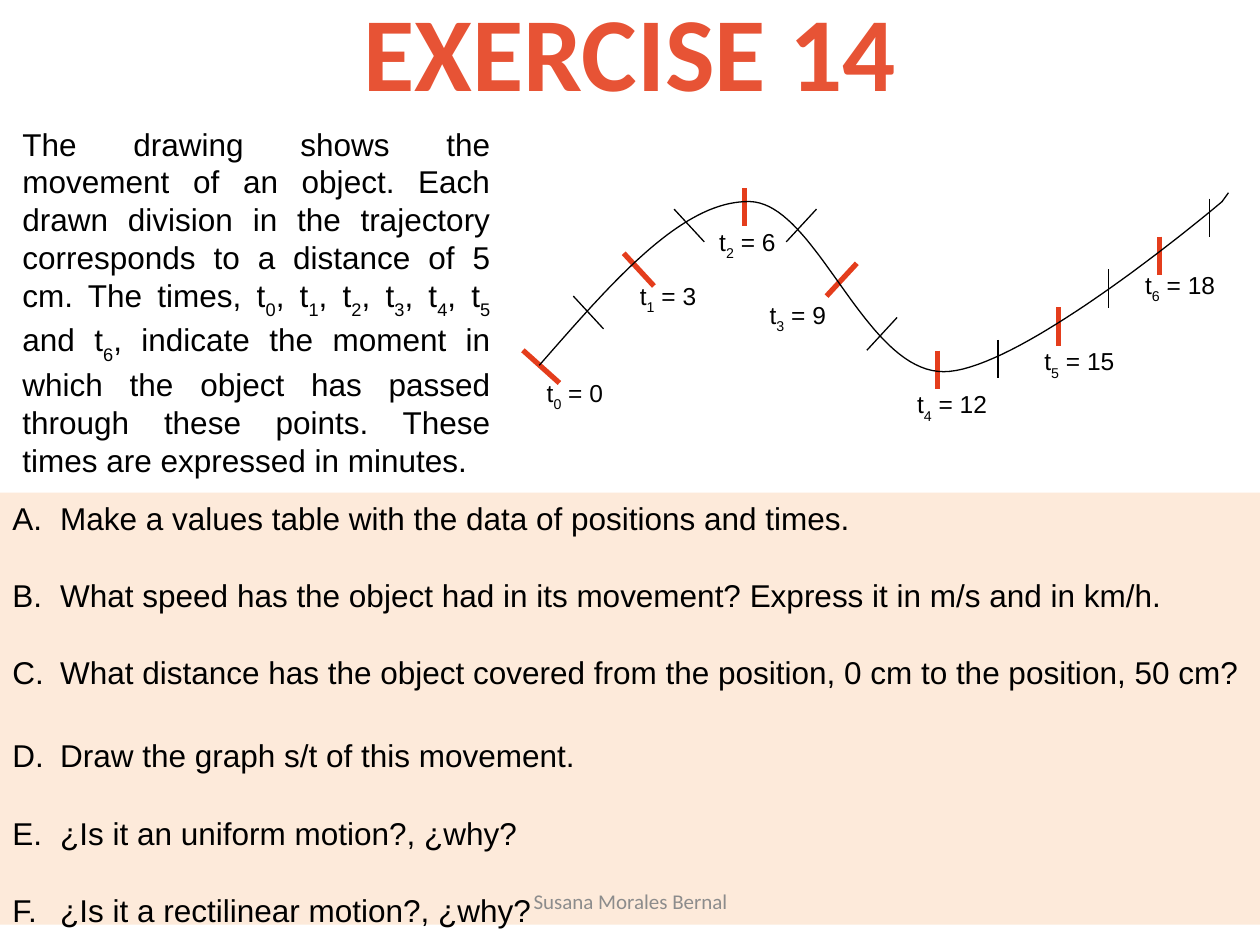
from dataclasses import dataclass

from lxml.etree import SubElement
from pptx import Presentation
from pptx.dml.color import RGBColor
from pptx.enum.shapes import MSO_CONNECTOR as Connector, MSO_SHAPE as Shape
from pptx.enum.text import MSO_ANCHOR as Anchor, PP_ALIGN as Align
from pptx.oxml.ns import qn
from pptx.util import Inches, Pt


@dataclass(frozen=True)
class Theme:
    ink: str = "000000"
    heading: str = "E75335"
    mark: str = "E43D1C"
    panel: str = "FDEADA"
    muted: str = "8C8C8C"
    body_font: str = "Arial"
    title_font: str = "Calibri"
    title_size: int = 60
    body_size: int = 18
    label_size: int = 14
    footer_size: int = 12
    thick: float = 3
    thin: float = 0.75


class ExerciseSlide:
    """Places elements on a grid of 100 columns by 75 rows."""

    def __init__(self, deck, theme):
        self.theme = theme
        self.column = deck.slide_width / 100
        self.row = deck.slide_height / 75
        self.slide = deck.slides.add_slide(deck.slide_layouts[5])
        self.drawing = self.slide.shapes.add_group_shape().shapes

    def spot(self, x, y):
        return round(x * self.column), round(y * self.row)

    def box(self, x, y, width, height):
        return *self.spot(x, y), *self.spot(width, height)

    def style(self, run, size, color=None, font=None, bold=False):
        run.font.size = Pt(size)
        run.font.name = font or self.theme.body_font
        run.font.bold = bold
        run.font.color.rgb = RGBColor.from_string(color or self.theme.ink)

    def fill_in(self, paragraph, text, size, **look):
        """An underscore in the text lowers the one character after it."""
        first, *rest = text.split("_")
        pieces = [(first, False)]
        for part in rest:
            pieces += [(part[0], True), (part[1:], False)]
        for piece, lowered in pieces:
            run = paragraph.add_run()
            run.text = piece
            self.style(run, size, **look)
            if lowered:
                run.font._element.set("baseline", "-30000")

    def title(self, text, *place):
        heading = self.slide.shapes.title
        heading.left, heading.top, heading.width, heading.height = self.box(*place)
        frame = heading.text_frame
        frame.text = text
        frame.vertical_anchor = Anchor.MIDDLE
        frame.paragraphs[0].alignment = Align.CENTER
        self.style(frame.paragraphs[0].runs[0], self.theme.title_size,
                   self.theme.heading, self.theme.title_font, True)

    def text(self, text, place, size, align=Align.LEFT, wrap=True,
             anchor=Anchor.TOP, shapes=None, **look):
        frame = (shapes or self.slide.shapes).add_textbox(*self.box(*place)).text_frame
        frame.word_wrap = wrap
        frame.vertical_anchor = anchor
        frame.paragraphs[0].alignment = align
        self.fill_in(frame.paragraphs[0], text, size, **look)

    def division(self, x, y, dx, dy, major):
        """A short line across the trajectory, centred on (x, y)."""
        tick = self.drawing.add_connector(
            Connector.STRAIGHT,
            *self.spot(x - dx / 2, y - dy / 2), *self.spot(x + dx / 2, y + dy / 2))
        color = self.theme.mark if major else self.theme.ink
        tick.line.color.rgb = RGBColor.from_string(color)
        tick.line.width = Pt(self.theme.thick if major else self.theme.thin)
        SubElement(tick._element.spPr, qn("a:effectLst"))

    def curve(self, start, bends, end, steps=40):
        """Joined cubic arcs, followed by a straight last stretch."""
        points, here = [], start
        for bend in bends:
            knots = (here, *bend)
            for step in range(1, steps + 1):
                t = step / steps
                weights = ((1 - t) ** 3, 3 * t * (1 - t) ** 2,
                           3 * t * t * (1 - t), t ** 3)
                points.append(self.spot(*(
                    sum(w * knot[axis] for w, knot in zip(weights, knots))
                    for axis in (0, 1))))
            here = bend[-1]
        builder = self.drawing.build_freeform(*self.spot(*start))
        builder.add_line_segments(points + [self.spot(*end)], close=False)
        trajectory = builder.convert_to_shape()
        trajectory.shadow.inherit = False
        trajectory.fill.background()
        trajectory.line.color.rgb = RGBColor.from_string(self.theme.ink)
        trajectory.line.width = Pt(self.theme.thin)

    def questions(self, lines, place, gap, extra_gaps):
        panel = self.slide.shapes.add_shape(Shape.RECTANGLE, *self.box(*place))
        panel.shadow.inherit = False
        panel.fill.solid()
        panel.fill.fore_color.rgb = RGBColor.from_string(self.theme.panel)
        panel.line.fill.background()
        frame = panel.text_frame
        frame.word_wrap = True
        frame.vertical_anchor = Anchor.TOP
        for index, line in enumerate(lines):
            paragraph = frame.add_paragraph() if index else frame.paragraphs[0]
            paragraph.alignment = Align.LEFT
            if index:
                paragraph.space_before = Pt(gap + extra_gaps.get(index, 0))
            self.fill_in(paragraph, line, self.theme.body_size)
            # Hanging capital letters: A., B., C. ...
            properties = paragraph._p.get_or_add_pPr()
            properties.set("marL", str(Inches(0.38)))
            properties.set("indent", str(-Inches(0.38)))
            SubElement(properties, qn("a:buFont"), typeface=self.theme.body_font)
            SubElement(properties, qn("a:buAutoNum"), type="alphaUcPeriod")


FALLING, RISING, UPRIGHT = (2.4, 2.6), (-2.4, 2.6), (0, 3.05)
DIVISIONS = [
    (42.95, 29.1, (2.9, 2.6)), (46.7, 24.8, FALLING), (50.7, 21.4, FALLING),
    (54.7, 17.9, FALLING), (59.1, 16.45, UPRIGHT), (63.6, 17.9, RISING),
    (66.8, 22.2, RISING), (70, 26.5, RISING), (74.4, 29.35, UPRIGHT),
    (79.2, 28.5, UPRIGHT), (84, 25.9, UPRIGHT), (88, 22.9, UPRIGHT),
    (92, 20.3, UPRIGHT), (96, 17.3, UPRIGHT),
]
TRAJECTORY = [
    ((48.5, 22.5), (54.1, 15.9), (59.5, 16)),
    ((64.8, 16.1), (68.6, 29.5), (74.9, 29.5)),
    ((81.1, 29.5), (97, 16), (97, 16)),
]
TIME_SPOTS = [(42.4, 29.5), (49.8, 21.8), (56.1, 17.5), (60.1, 23.3),
              (71.8, 30.4), (81.9, 27), (89.9, 20.9)]
MINUTES_PER_MARK = 3
STATEMENT = (
    "The drawing shows the movement of an object. Each drawn division in the "
    "trajectory corresponds to a distance of 5 cm. The times, t_0, t_1, t_2, t_3, "
    "t_4, t_5 and t_6, indicate the moment in which the object has passed through "
    "these points. These times are expressed in minutes.")
QUESTIONS = [
    "Make a values table with the data of positions and times.",
    "What speed has the object had in its movement? Express it in m/s and in km/h.",
    "What distance has the object covered from the position, 0 cm to the position, 50 cm?",
    "Draw the graph s/t of this movement.",
    "¿Is it an uniform motion?, ¿why?",
    "¿Is it a rectilinear motion?, ¿why?",
]


def main():
    deck = Presentation()
    deck.slide_width, deck.slide_height = Inches(10), Inches(7.5)
    theme = Theme()
    page = ExerciseSlide(deck, theme)

    # Heading and statement
    page.title("EXERCISE 14", 5, -2.3, 90, 12.5)
    page.text(STATEMENT, (0.8, 9.4, 39.1, 28.3), theme.body_size, Align.JUSTIFY)

    # Trajectory: every second division carries a time
    for index, (x, y, lean) in enumerate(DIVISIONS):
        page.division(x, y, *lean, major=index % 2 == 0)
    page.curve((42.8, 29), TRAJECTORY, (97.5, 15.3))
    for index, (x, y) in enumerate(TIME_SPOTS):
        minutes = index * MINUTES_PER_MARK
        width = 9.3 if minutes > 9 else 8.1
        page.text(f"t_{index} = {minutes}", (x, y, width, 3.7), theme.label_size,
                  wrap=False, shapes=page.drawing)

    # Questions and footer
    page.questions(QUESTIONS, (0, 39.1, 100, 34.3), gap=22.5, extra_gaps={3: 3.5})
    page.text("Susana Morales Bernal", (34.2, 69.5, 31.7, 4), theme.footer_size,
              Align.CENTER, anchor=Anchor.MIDDLE, color=theme.muted,
              font=theme.title_font)
    deck.save("out.pptx")


if __name__ == "__main__":
    main()
